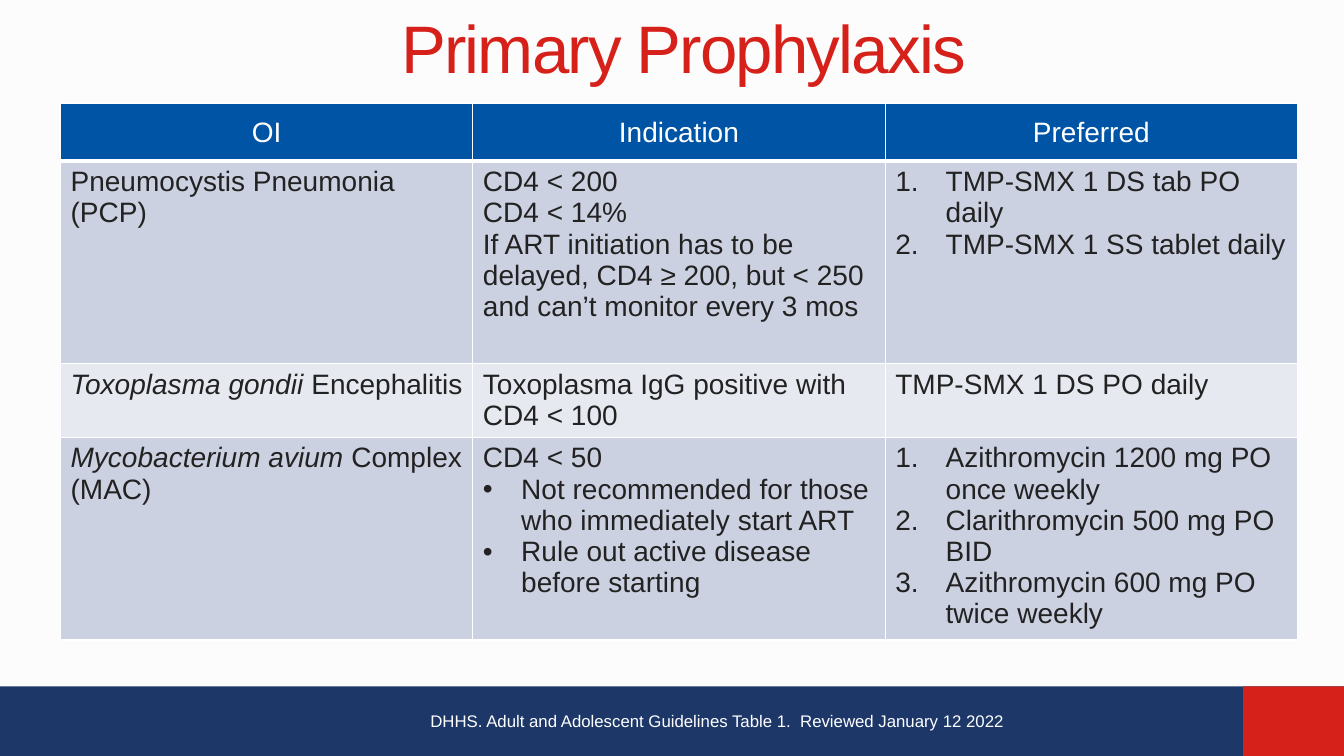
from pptx import Presentation
from pptx.dml.color import RGBColor
from pptx.enum.shapes import MSO_SHAPE as Shape
from pptx.enum.text import MSO_ANCHOR as Anchor, PP_ALIGN as Align
from pptx.util import Inches, Pt
from lxml.etree import SubElement, fromstring
from pptx.oxml.ns import qn, nsdecls

TITLE = "Primary Prophylaxis"
FOOTER = "DHHS. Adult and Adolescent Guidelines Table 1.  Reviewed January 12 2022"
HEADS = ["OI", "Indication", "Preferred"]
ROWS = [
    [
        [("", "", "Pneumocystis Pneumonia (PCP)")],
        [
            ("", "", "CD4 < 200"),
            ("", "", "CD4 < 14%"),
            ("", "", "If ART initiation has to be delayed, CD4 ≥ 200, but < 250 "
             "and can’t monitor every 3 mos"),
        ],
        [
            ("num", "", "TMP-SMX 1 DS tab PO daily"),
            ("num", "", "TMP-SMX 1 SS tablet daily"),
        ],
    ],
    [
        [("", "Toxoplasma gondii ", "Encephalitis")],
        [("", "", "Toxoplasma IgG positive with CD4 < 100")],
        [("", "", "TMP-SMX 1 DS PO daily")],
    ],
    [
        [("", "Mycobacterium avium ", "Complex (MAC)")],
        [
            ("", "", "CD4 < 50"),
            ("dot", "", "Not recommended for those who immediately start ART"),
            ("dot", "", "Rule out active disease before starting"),
        ],
        [
            ("num", "", "Azithromycin 1200 mg PO once weekly"),
            ("num", "", "Clarithromycin 500 mg PO BID"),
            ("num", "", "Azithromycin 600 mg PO twice weekly"),
        ],
    ],
]
HIGHS = [0.57, 2.01, 0.73, 2.01]
WIDE = 4.09
BANDS = ["CCD1E1", "E7E9F1"]
BARS = [(0, 13.33, "1C3768"), (12.33, 1, "D6201A")]
MARKS = {
    "num": (0.5, "a:buAutoNum", {"type": "arabicPeriod"}),
    "dot": (0.38, "a:buChar", {"char": "•"}),
}


def tint(text):
    return RGBColor.from_string(text)


def paint(fill, color):
    fill.solid()
    fill.fore_color.rgb = tint(color)


def style(font, size, color, **more):
    form = {"name": "Arial", "size": Pt(size), "bold": False, **more}
    for key, val in form.items():
        setattr(font, key, val)
    font.color.rgb = tint(color)


def mark(para, kind):
    gap, tag, attrs = MARKS[kind]
    props = para._p.get_or_add_pPr()
    props.set("marL", str(Inches(gap)))
    props.set("indent", str(-Inches(gap)))
    SubElement(props, qn("a:buFont"), typeface="Arial")
    SubElement(props, qn(tag), attrs)


def edge(cell, base):
    props = cell._tc.get_or_add_tcPr()
    for i, side in enumerate("LRTB"):
        width = Pt(base if side == "B" else 1)
        props.insert(i, fromstring(
            f'<a:ln{side} {nsdecls("a")} w="{width}"><a:solidFill>'
            f'<a:srgbClr val="FFFFFF"/></a:solidFill></a:ln{side}>'))


def write(frame, lines):
    for i, (kind, latin, plain) in enumerate(lines):
        para = frame.add_paragraph() if i else frame.paragraphs[0]
        para.line_spacing = Pt(22.3)
        if kind:
            mark(para, kind)
        for text, slant in ((latin, True), (plain, False)):
            if text:
                run = para.add_run()
                run.text = text
                style(run.font, 20, "222222", italic=slant)


def label(slide, box, text, size, color):
    frame = slide.shapes.add_textbox(*map(Inches, box)).text_frame
    run = frame.paragraphs[0].add_run()
    run.text = text
    style(run.font, size, color)
    return frame, run


def main():
    deck = Presentation()
    deck.slide_width, deck.slide_height = Inches(13.33), Inches(7.5)
    slide = deck.slides.add_slide(deck.slide_layouts[6])
    paint(slide.background.fill, "FCFCFC")

    for left, width, color in BARS:
        bar = slide.shapes.add_shape(
            Shape.RECTANGLE, *map(Inches, (left, 6.81, width, 0.69)))
        bar.shadow.inherit = False
        paint(bar.fill, color)
        bar.line.fill.background()

    frame, run = label(slide, (2.96, 0.08, 7.64, 0.77), TITLE, 48, "D6201A")
    frame.word_wrap = True
    frame.vertical_anchor = Anchor.MIDDLE
    frame.paragraphs[0].alignment = Align.CENTER
    run.font._element.set("spc", "-130")

    grid = slide.shapes.add_table(
        len(HIGHS), len(HEADS), Inches(0.6), Inches(1.03),
        Inches(WIDE * len(HEADS)), Inches(sum(HIGHS))).table
    for col in grid.columns:
        col.width = Inches(WIDE)
    for row, high in zip(grid.rows, HIGHS):
        row.height = Inches(high)

    for c, head in enumerate(HEADS):
        cell = grid.cell(0, c)
        cell.vertical_anchor = Anchor.MIDDLE
        para = cell.text_frame.paragraphs[0]
        para.alignment = Align.CENTER
        run = para.add_run()
        run.text = head
        style(run.font, 20, "FFFFFF")
        paint(cell.fill, "0054A6")
        edge(cell, 3)

    for r, row in enumerate(ROWS):
        for c, lines in enumerate(row):
            cell = grid.cell(r + 1, c)
            write(cell.text_frame, lines)
            paint(cell.fill, BANDS[r % 2])
            edge(cell, 1)

    frame, run = label(slide, (4.17, 7, 5.93, 0.3), FOOTER, 12, "FFFFFF")
    frame.word_wrap = False
    deck.save("out.pptx")


if __name__ == "__main__":
    main()
